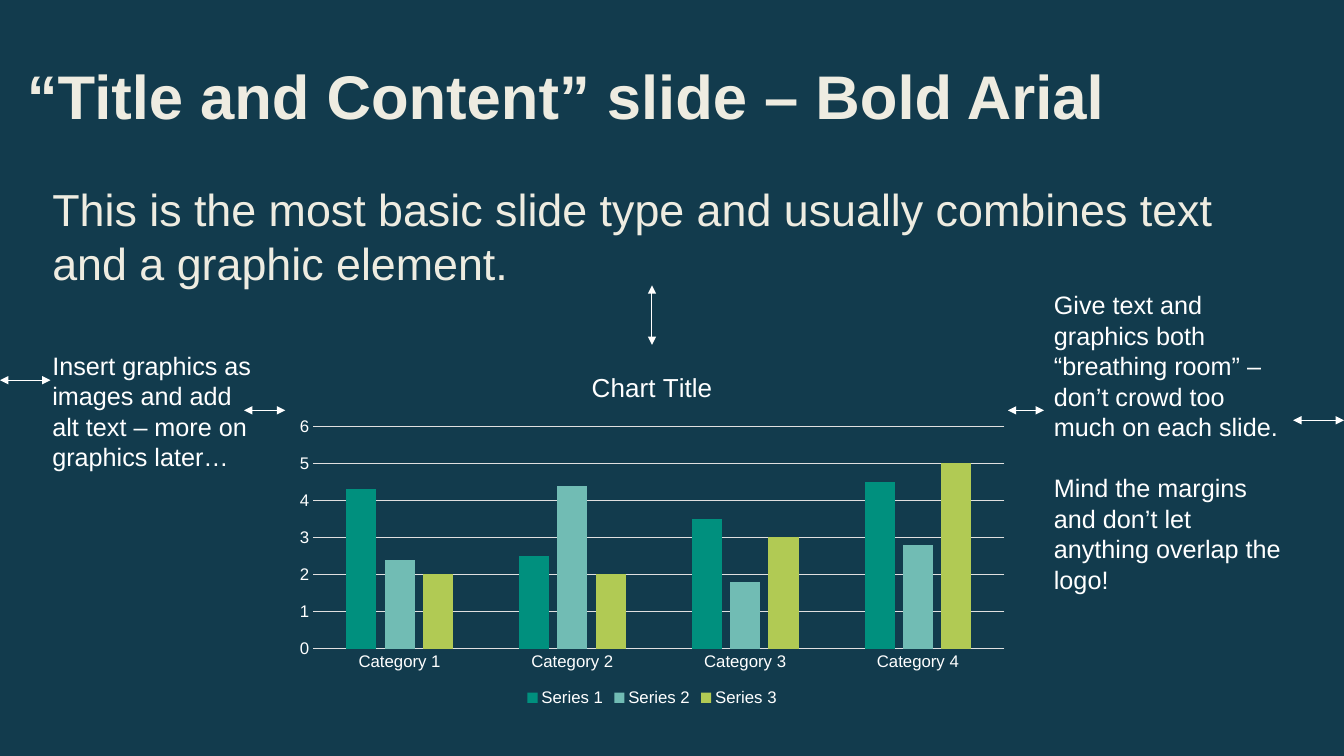
from dataclasses import dataclass

from lxml import etree
from pptx import Presentation
from pptx import util as u
from pptx.chart.data import CategoryChartData
from pptx.dml.color import RGBColor
from pptx.enum import chart as charts, shapes, text
from pptx.oxml.ns import qn


@dataclass(frozen=True)
class Theme:
    """Colours, font, type sizes and line weights of the slide."""
    font: str = "Arial"
    background: str = "123B4D"
    cream: str = "EEECE1"
    white: str = "FFFFFF"
    grid: str = "E0E0E0"
    series: tuple = ("00907E", "71BCB4", "B1CA54")
    title: float = 44
    body: float = 32
    note: float = 18
    chart_title: float = 18.6
    chart_label: float = 12
    hairline: float = 0.75
    line_height: float = 1.21


THEME = Theme()


def colour(value):
    """Turn a hex string into a colour."""
    return RGBColor.from_string(value)


def style_font(font, size, hex_colour, bold=False):
    """Apply the theme font with a size, colour and weight."""
    font.name = THEME.font
    font.size = u.Pt(size)
    font.bold = bold
    font.color.rgb = colour(hex_colour)


def style_line(line):
    """Draw a thin grid-coloured chart line."""
    line.color.rgb = colour(THEME.grid)
    line.width = u.Pt(THEME.hairline)


def add_text(slide, box, paragraphs, size, hex_colour, bold=False,
             anchor=text.MSO_ANCHOR.TOP):
    """Add a wrapped text box with one line of space between paragraphs."""
    shape = slide.shapes.add_textbox(*(u.Cm(length) for length in box))
    frame = shape.text_frame
    frame.word_wrap = True
    frame.vertical_anchor = anchor
    frame.text = "\n".join(paragraphs)
    line_pitch = u.Pt(round(size * THEME.line_height, 1))
    for index, paragraph in enumerate(frame.paragraphs):
        paragraph.line_spacing = line_pitch
        if index:
            paragraph.space_before = line_pitch
        for run in paragraph.runs:
            style_font(run.font, size, hex_colour, bold)


def add_double_arrow(slide, *ends):
    """Add a thin white line with an arrowhead at each end."""
    arrow = slide.shapes.add_connector(
        shapes.MSO_CONNECTOR.STRAIGHT, *(u.Cm(length) for length in ends))
    arrow.line.color.rgb = colour(THEME.white)
    arrow.line.width = u.Pt(THEME.hairline)
    properties = arrow._element.spPr
    outline = properties.find(qn("a:ln"))
    for end in ("a:headEnd", "a:tailEnd"):
        etree.SubElement(outline, qn(end), type="triangle")
    etree.SubElement(properties, qn("a:effectLst"))


def style_axes(chart):
    """Format the category and value axes."""
    for axis in (chart.category_axis, chart.value_axis):
        axis.major_tick_mark = charts.XL_TICK_MARK.NONE
        axis.minor_tick_mark = charts.XL_TICK_MARK.NONE
        style_font(axis.tick_labels.font, THEME.chart_label, THEME.white)
    style_line(chart.category_axis.format.line)
    values = chart.value_axis
    values.minimum_scale, values.maximum_scale, values.major_unit = 0, 6, 1
    values.format.line.fill.background()
    values.has_major_gridlines = True
    style_line(values.major_gridlines.format.line)


def add_column_chart(slide, box, title, categories, series):
    """Add a clustered column chart with a title and a bottom legend."""
    data = CategoryChartData()
    data.categories = categories
    for name, values in series.items():
        data.add_series(name, values)
    chart = slide.shapes.add_chart(
        charts.XL_CHART_TYPE.COLUMN_CLUSTERED,
        *(u.Cm(length) for length in box), data).chart
    style_font(chart.font, THEME.chart_label, THEME.white)
    chart.has_title = True
    chart.chart_title.include_in_layout = False
    chart.chart_title.text_frame.text = title
    for run in chart.chart_title.text_frame.paragraphs[0].runs:
        style_font(run.font, THEME.chart_title, THEME.white)
    chart.has_legend = True
    chart.legend.position = charts.XL_LEGEND_POSITION.BOTTOM
    chart.legend.include_in_layout = False
    style_font(chart.legend.font, THEME.chart_label, THEME.white)
    style_axes(chart)
    plot = chart.plots[0]
    plot.gap_width, plot.overlap, plot.vary_by_categories = 219, -27, False
    for columns, fill in zip(plot.series, THEME.series):
        columns.format.fill.solid()
        columns.format.fill.fore_color.rgb = colour(fill)


def main():
    """Build the slide and save it."""
    presentation = Presentation()
    presentation.slide_width = u.Cm(33.87)
    presentation.slide_height = u.Cm(19.05)
    slide = presentation.slides.add_slide(presentation.slide_layouts[6])
    slide.background.fill.solid()
    slide.background.fill.fore_color.rgb = colour(THEME.background)

    add_text(slide, (0.43, 0.84, 33.02, 3.1),
             ["“Title and Content” slide – Bold Arial"],
             THEME.title, THEME.cream, True, text.MSO_ANCHOR.MIDDLE)
    add_text(slide, (1.07, 4.45, 31.55, 6.35),
             ["This is the most basic slide type and usually combines text "
              "and a graphic element."], THEME.body, THEME.cream)
    add_column_chart(
        slide, (7.19, 8.89, 18.49, 9.02), "Chart Title",
        [f"Category {number}" for number in range(1, 5)],
        {"Series 1": (4.3, 2.5, 3.5, 4.5),
         "Series 2": (2.4, 4.4, 1.8, 2.8),
         "Series 3": (2, 2, 3, 5)})
    add_text(slide, (1.07, 8.69, 5.72, 3.33),
             ["Insert graphics as images and add alt text – more on "
              "graphics later…"], THEME.note, THEME.white)
    add_text(slide, (26.31, 7.16, 6.32, 7.95),
             ["Give text and graphics both “breathing room” – don’t crowd "
              "too much on each slide.",
              "Mind the margins and don’t let anything overlap the logo!"],
             THEME.note, THEME.white)
    for ends in ((16.43, 8.69, 16.43, 7.19),
                 (25.4, 10.34, 26.31, 10.34),
                 (7.19, 10.34, 6.15, 10.34),
                 (32.59, 10.59, 33.87, 10.59),
                 (0, 9.58, 1.27, 9.58)):
        add_double_arrow(slide, *ends)
    presentation.save("out.pptx")


if __name__ == "__main__":
    main()
